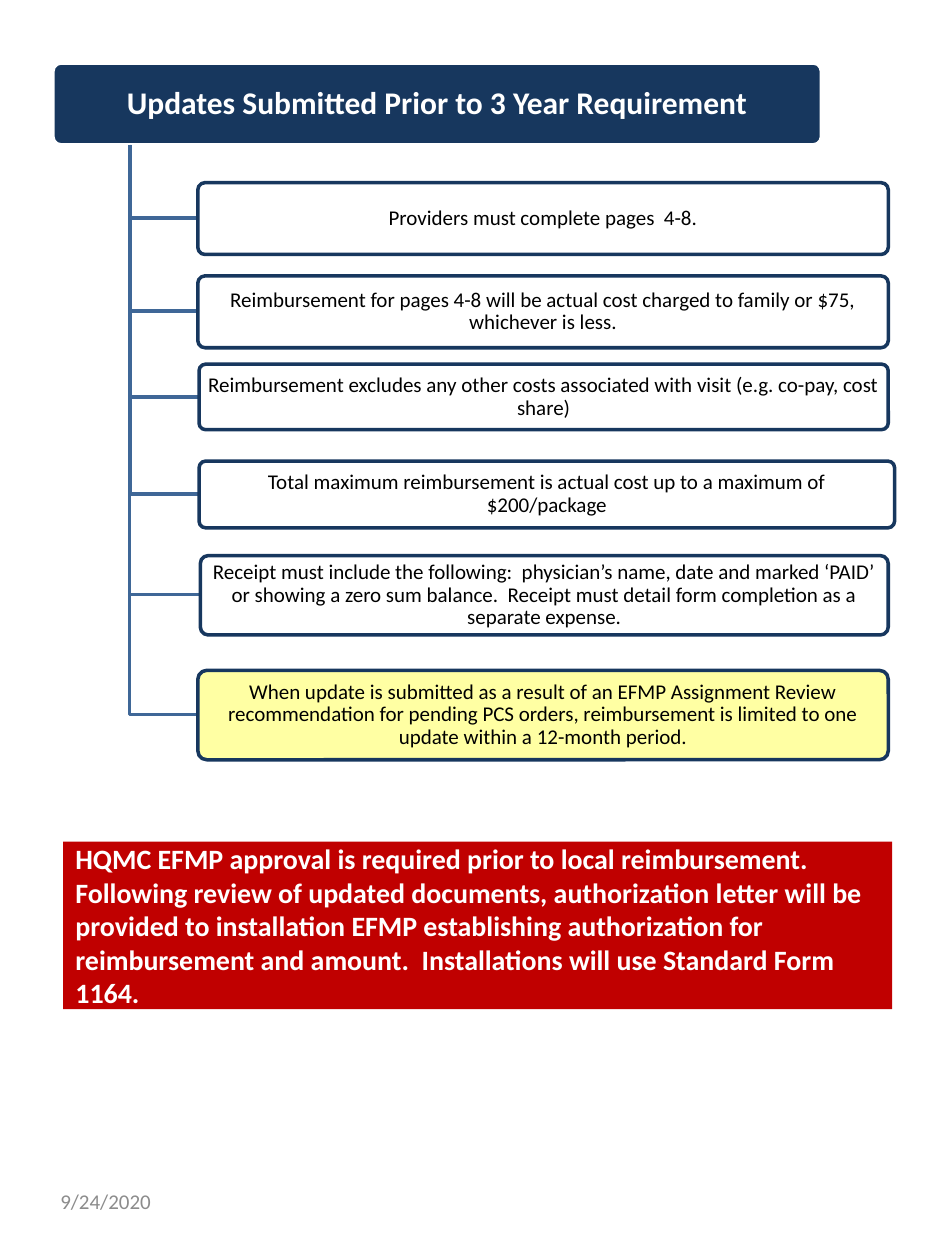
from lxml.etree import SubElement
from pptx import Presentation
from pptx.dml.color import RGBColor
from pptx.enum.shapes import MSO_SHAPE as Preset
from pptx.enum.text import MSO_ANCHOR as Anchor, PP_ALIGN as Align
from pptx.oxml.ns import qn
from pptx.util import Emu, Pt

PX = 9144
FONT = "Calibri"
NAVY = RGBColor(0x17, 0x37, 0x5E)
STEEL = RGBColor(0x3F, 0x67, 0x97)
RED = RGBColor(0xC0, 0x00, 0x00)
YELLOW = RGBColor(0xFF, 0xFF, 0x99)
WHITE = RGBColor(0xFF, 0xFF, 0xFF)
BLACK = RGBColor(0x00, 0x00, 0x00)
GRAY = RGBColor(0x8C, 0x8C, 0x8C)

TRUNK_X, TRUNK_TOP = 103, 115
RULES = [
    ("Providers must complete pages  4-8.", (157, 145, 548, 57), WHITE),
    ("Reimbursement for pages 4-8 will be actual cost charged to family or $75, "
     "whichever is less.", (157, 219, 548, 57), WHITE),
    ("Reimbursement excludes any other costs associated with visit "
     "(e.g. co-pay, cost share)", (158, 289, 547, 52), WHITE),
    ("Total maximum reimbursement is actual cost up to a maximum of $200/package",
     (158, 366, 552, 53), WHITE),
    ("Receipt must include the following:  physician’s name, date and marked ‘PAID’ "
     "or showing a zero sum balance.  Receipt must detail form completion as a "
     "separate expense.", (159, 441, 546, 63), WHITE),
    ("When update is submitted as a result of an EFMP Assignment Review "
     "recommendation for pending PCS orders, reimbursement is limited to one "
     "update within a 12-month period.", (157, 532, 548, 71), YELLOW),
]
NOTICE = ("HQMC EFMP approval is required prior to local reimbursement. Following "
          "review of updated documents, authorization letter will be provided to "
          "installation EFMP establishing authorization for reimbursement and amount.  "
          "Installations will use Standard Form 1164.")


def px(*lengths):
    """Turn pixel lengths into EMU."""
    return [Emu(length * PX) for length in lengths]


def write(shape, text, size, color, bold=False, align=Align.LEFT, spacing=1.0, insets=(10, 5)):
    """Fill a shape with one vertically centred paragraph."""
    frame = shape.text_frame
    frame.word_wrap = True
    frame.vertical_anchor = Anchor.MIDDLE
    frame.margin_left, frame.margin_top = px(*insets)
    frame.margin_right, frame.margin_bottom = px(*insets)
    paragraph = frame.paragraphs[0]
    paragraph.alignment = align
    paragraph.line_spacing = spacing
    run = paragraph.add_run()
    run.text = text
    font = run.font
    font.name, font.size, font.bold = FONT, Pt(size), bold
    font.color.rgb = color


def add_box(slide, preset, box, fill, line=None, opacity=100):
    """Add a filled preset shape with an optional outline."""
    shape = slide.shapes.add_shape(preset, *px(*box))
    shape.shadow.inherit = False
    shape.fill.solid()
    shape.fill.fore_color.rgb = fill
    if opacity < 100:
        color = shape.fill._xPr.find(qn("a:solidFill"))[0]
        SubElement(color, qn("a:alpha"), val=str(opacity * 1000))
    if line is None:
        shape.line.fill.background()
    else:
        shape.line.color.rgb = line
        shape.line.width = Pt(2)
    return shape


def add_card(slide, box, fill, line, opacity=100):
    """Add a box with slightly rounded corners."""
    card = add_box(slide, Preset.ROUNDED_RECTANGLE, box, fill, line, opacity)
    card.adjustments[0] = 0.1
    return card


def add_branch(slide, box):
    """Draw the elbow from the trunk to the left middle of a box."""
    left, top, _, height = box
    middle = top + height // 2
    builder = slide.shapes.build_freeform(TRUNK_X, TRUNK_TOP, scale=PX)
    builder.add_line_segments([(TRUNK_X, middle), (left, middle)], close=False)
    branch = builder.convert_to_shape()
    branch.shadow.inherit = False
    branch.fill.background()
    branch.line.color.rgb = STEEL
    branch.line.width = Pt(2)


def add_rule(slide, text, box, fill):
    """Add one rule card with its branch."""
    add_branch(slide, box)
    card = add_card(slide, box, fill, NAVY, opacity=90)
    write(card, text, 12, BLACK, align=Align.CENTER, spacing=0.9, insets=(4, 4))


def main():
    """Build and save the slide."""
    presentation = Presentation()
    presentation.slide_width, presentation.slide_height = px(750, 1000)
    slide = presentation.slides.add_slide(presentation.slide_layouts[6])

    title = add_card(slide, (42, 50, 610, 65), NAVY, WHITE)
    write(title, "Updates Submitted Prior to 3 Year Requirement", 18, WHITE,
          bold=True, align=Align.CENTER, spacing=0.9, insets=(6, 5))
    for text, box, fill in RULES:
        add_rule(slide, text, box, fill)

    notice = add_box(slide, Preset.RECTANGLE, (50, 668, 658, 133), RED)
    write(notice, NOTICE, 16, WHITE, bold=True)
    date = slide.shapes.add_textbox(*px(38, 927, 175, 53))
    write(date, "9/24/2020", 12, GRAY)

    presentation.save("out.pptx")


if __name__ == "__main__":
    main()
